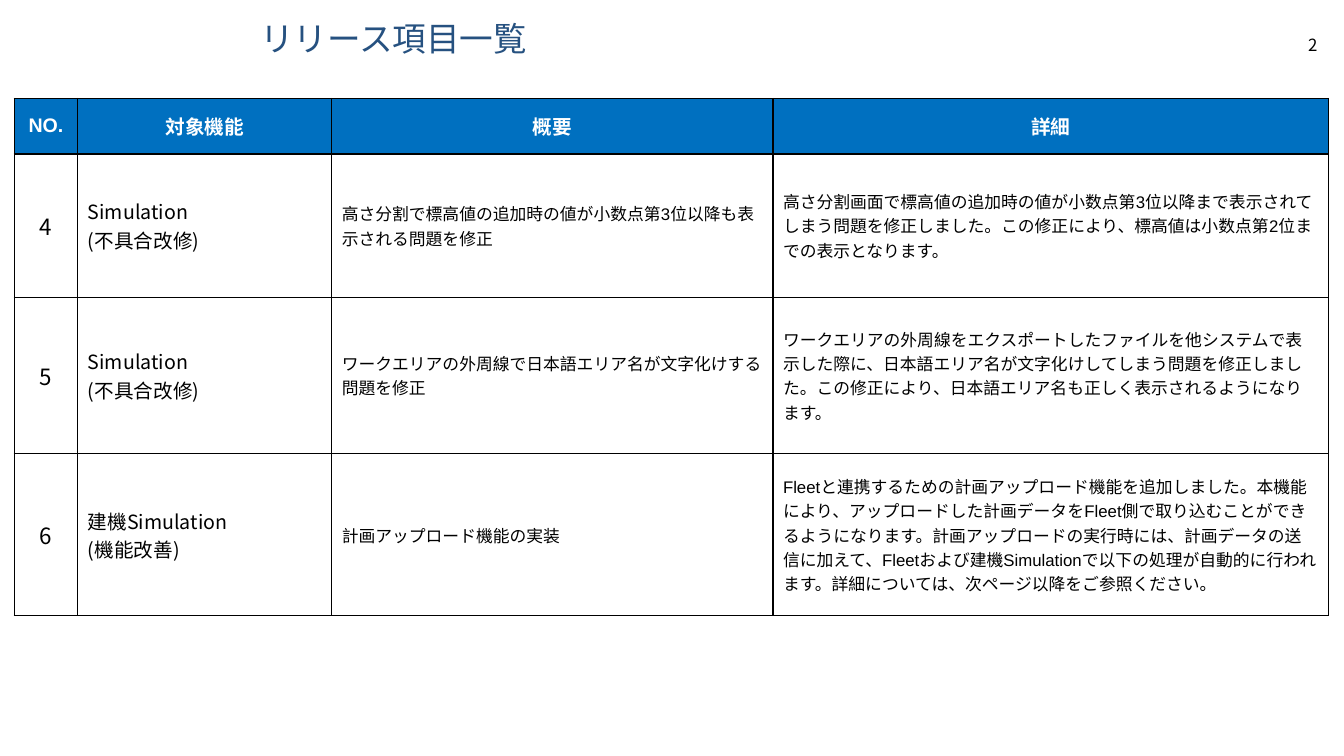
"""Build the release item list slide."""
from dataclasses import dataclass

from pptx import Presentation
from pptx import util as u
from pptx.dml.color import RGBColor
from pptx.enum import text
from pptx.oxml import parse_xml
from pptx.oxml.ns import nsdecls


@dataclass(frozen=True)
class Theme:
    """Colours, fonts and type sizes."""
    title: str = "265180"
    header: str = "0070C0"
    ink: str = "000000"
    paper: str = "FFFFFF"
    latin: str = "Arial"
    japanese: str = "Noto Sans CJK JP"
    title_size: int = 24
    number_size: int = 16
    label_size: int = 14
    body_size: int = 12


@dataclass(frozen=True)
class Column:
    """A table column and the format of its body cells."""
    heading: str
    width: float
    size: int
    font: str
    align: text.PP_ALIGN = text.PP_ALIGN.LEFT


@dataclass(frozen=True)
class Release:
    """One released item."""
    no: str
    target: str
    summary: str
    detail: str
    height: float


T = Theme()
HEADER_HEIGHT = 1.4
COLUMNS = [
    Column("NO.", 1.6, T.number_size, T.japanese, text.PP_ALIGN.CENTER),
    Column("対象機能", 6.4, T.label_size, T.japanese),
    Column("概要", 11.12, T.body_size, T.latin),
    Column("詳細", 14, T.body_size, T.latin),
]
RELEASES = [
    Release("4", "Simulation\n(不具合改修)",
            "高さ分割で標高値の追加時の値が小数点第3位以降も表示される問題を修正",
            "高さ分割画面で標高値の追加時の値が小数点第3位以降まで表示されてしまう問題を修正しました。"
            "この修正により、標高値は小数点第2位までの表示となります。", 3.61),
    Release("5", "Simulation\n(不具合改修)",
            "ワークエリアの外周線で日本語エリア名が文字化けする問題を修正",
            "ワークエリアの外周線をエクスポートしたファイルを他システムで表示した際に、"
            "日本語エリア名が文字化けしてしまう問題を修正しました。"
            "この修正により、日本語エリア名も正しく表示されるようになります。", 3.94),
    Release("6", "建機Simulation\n(機能改善)",
            "計画アップロード機能の実装",
            "Fleetと連携するための計画アップロード機能を追加しました。"
            "本機能により、アップロードした計画データをFleet側で取り込むことができるようになります。"
            "計画アップロードの実行時には、計画データの送信に加えて、"
            "Fleetおよび建機Simulationで以下の処理が自動的に行われます。"
            "詳細については、次ページ以降をご参照ください。", 4.09),
]


def write(tf, content: str, *, size: int, font: str = T.latin, color: str = T.ink,
          bold: bool = False, align=text.PP_ALIGN.LEFT, spacing: float = 1.0) -> None:
    """Write one paragraph per line of content."""
    tf.word_wrap = True
    for i, line in enumerate(content.split("\n")):
        p = tf.add_paragraph() if i else tf.paragraphs[0]
        p.alignment = align
        p.line_spacing = spacing
        r = p.add_run()
        r.text = line
        r.font.size = u.Pt(size)
        r.font.bold = bold
        r.font.color.rgb = RGBColor.from_string(color)
        r.font.name = font
        r.font._element.append(parse_xml(
            f'<a:ea {nsdecls("a")} typeface="{T.japanese}"/>'))


def format_cell(cell, fill: str) -> None:
    """Give a cell its borders, fill and anchor."""
    cell.vertical_anchor = text.MSO_ANCHOR.MIDDLE
    tc_pr = cell._tc.get_or_add_tcPr()
    for side in "LRTB":
        tc_pr.append(parse_xml(
            f'<a:ln{side} {nsdecls("a")} w="{u.Pt(1)}"><a:solidFill>'
            f'<a:srgbClr val="{T.ink}"/></a:solidFill></a:ln{side}>'))
    cell.fill.solid()
    cell.fill.fore_color.rgb = RGBColor.from_string(fill)


def add_title(s, content: str) -> None:
    """Place and format the title."""
    sp = s.shapes.title
    sp.left, sp.top, sp.width, sp.height = u.Cm(6.3), u.Cm(0.5), u.Cm(22.66), u.Cm(1.07)
    tf = sp.text_frame
    tf.auto_size = text.MSO_AUTO_SIZE.NONE
    tf.vertical_anchor = text.MSO_ANCHOR.MIDDLE
    write(tf, content, size=T.title_size, color=T.title, spacing=0.9)


def add_page_number(s, number: str) -> None:
    """Add the page number at the top right."""
    sp = s.shapes.add_textbox(u.Cm(31.7), u.Cm(0.76), u.Cm(1.75), u.Cm(0.76))
    write(sp.text_frame, number, size=T.body_size, font=T.japanese,
          align=text.PP_ALIGN.RIGHT)


def add_releases(s, releases: list[Release]) -> None:
    """Add the table of released items."""
    heights = [HEADER_HEIGHT] + [item.height for item in releases]
    table = s.shapes.add_table(
        len(heights), len(COLUMNS), u.Cm(0.36), u.Cm(2.48),
        u.Cm(sum(c.width for c in COLUMNS)), u.Cm(sum(heights))).table
    table.horz_banding = False
    for row, height in zip(table.rows, heights):
        row.height = u.Cm(height)
    for j, column in enumerate(COLUMNS):
        table.columns[j].width = u.Cm(column.width)
        head = table.cell(0, j)
        format_cell(head, T.header)
        write(head.text_frame, column.heading, size=T.label_size, color=T.paper,
              bold=True, align=text.PP_ALIGN.CENTER)
        for i, item in enumerate(releases, 1):
            content = (item.no, item.target, item.summary, item.detail)[j]
            cell = table.cell(i, j)
            format_cell(cell, T.paper)
            write(cell.text_frame, content, size=column.size, font=column.font,
                  align=column.align)


def main() -> None:
    """Build and save the presentation."""
    prs = Presentation()
    prs.slide_width, prs.slide_height = u.Cm(33.87), u.Cm(19.05)
    s = prs.slides.add_slide(prs.slide_layouts[5])
    add_page_number(s, "2")
    add_title(s, "リリース項目一覧")
    add_releases(s, RELEASES)
    prs.save("out.pptx")


if __name__ == "__main__":
    main()
